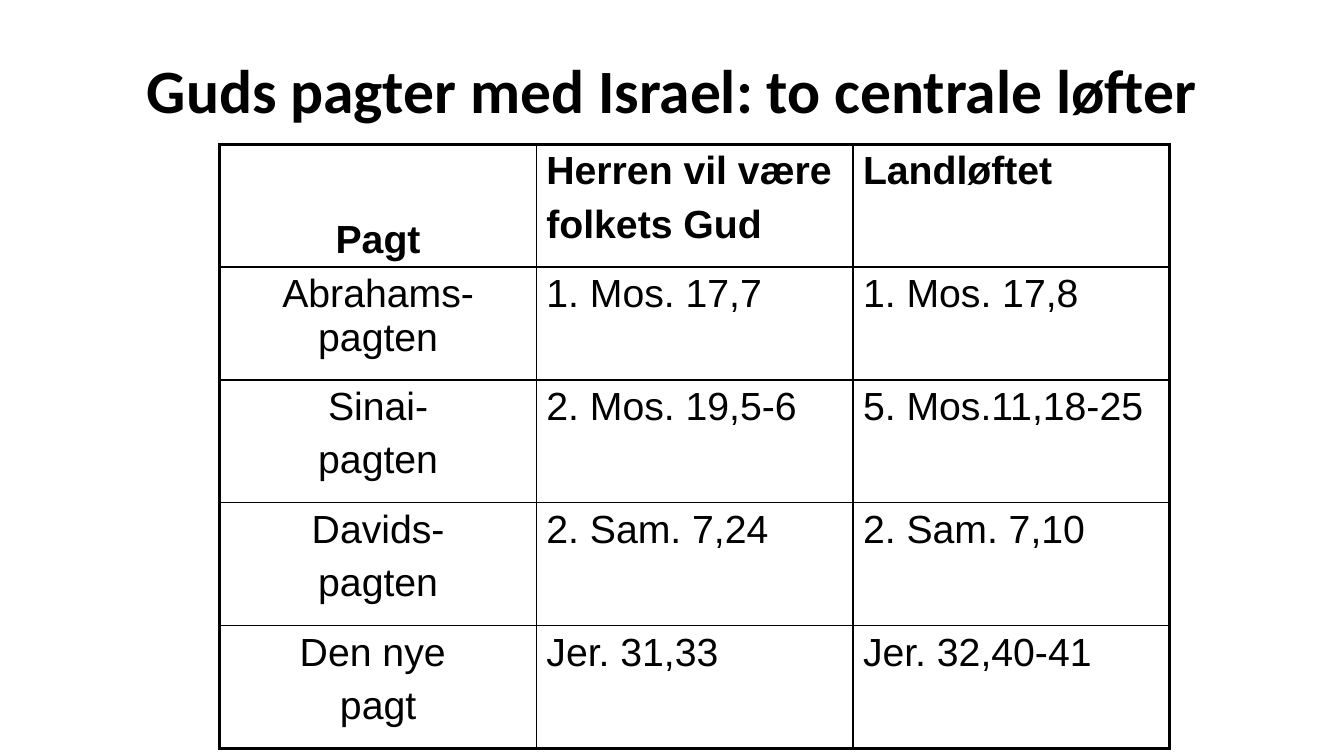
from dataclasses import dataclass

from pptx import Presentation
from pptx import util as u
from pptx.dml.color import RGBColor
from pptx.enum import text
from pptx.oxml import parse_xml
from pptx.oxml.ns import nsdecls

PX = 9144  # EMU per px, 100 px to the inch
COLOURS = {"ink": "000000"}
INK = RGBColor.from_string(COLOURS["ink"])
THIN, THICK = 1, 2.25
COLUMN_WIDTH = 314
ROW_HEIGHT, ABRAHAM_HEIGHT = 122, 112


@dataclass(frozen=True)
class Covenant:
    name: str
    god_promise: str
    land_promise: str
    height: int = ROW_HEIGHT


HEADINGS = Covenant("Pagt", "Herren vil være\nfolkets Gud", "Landløftet")
COVENANTS = [
    Covenant("Abrahams-pagten", "1. Mos. 17,7", "1. Mos. 17,8", ABRAHAM_HEIGHT),
    Covenant("Sinai-\npagten", "2. Mos. 19,5-6", "5. Mos.11,18-25"),
    Covenant("Davids-\npagten", "2. Sam. 7,24", "2. Sam. 7,10"),
    Covenant("Den nye \npagt", "Jer. 31,33", "Jer. 32,40-41"),
]


def px(length: int) -> u.Emu:
    return u.Emu(length * PX)


def add_border(cell, side: str, points: float) -> None:
    """Draw one side (L, R, T or B); call in that order, before the fill."""
    cell._tc.get_or_add_tcPr().append(parse_xml(
        f'<a:ln{side} {nsdecls("a")} w="{u.Pt(points)}"><a:solidFill>'
        f'<a:srgbClr val="{COLOURS["ink"]}"/></a:solidFill></a:ln{side}>'))


def fill_cell(cell, wording: str, bold: bool, centred: bool) -> None:
    cell.text = wording
    for paragraph in cell.text_frame.paragraphs:
        paragraph.alignment = text.PP_ALIGN.CENTER if centred else text.PP_ALIGN.LEFT
        paragraph.space_before = u.Pt(7)
        paragraph.font.name = "Arial"
        paragraph.font.size = u.Pt(28)
        paragraph.font.bold = bold
        paragraph.font.color.rgb = INK


def add_title(slide) -> None:
    title = slide.shapes.title
    title.left, title.top, title.width, title.height = map(px, (67, 30, 1200, 125))
    frame = title.text_frame
    frame.text = "Guds pagter med Israel: to centrale løfter"
    frame.auto_size = text.MSO_AUTO_SIZE.NONE
    frame.vertical_anchor = text.MSO_ANCHOR.MIDDLE
    heading = frame.paragraphs[0]
    heading.alignment = text.PP_ALIGN.CENTER
    heading.line_spacing = 0.9
    heading.font.name = "Calibri"
    heading.font.size = u.Pt(44)
    heading.font.bold = True
    heading.font.color.rgb = INK


def add_covenant_table(slide) -> None:
    entries = [HEADINGS, *COVENANTS]
    height = sum(entry.height for entry in entries)
    table = slide.shapes.add_table(len(entries), 3, px(218), px(143),
                                   px(3 * COLUMN_WIDTH), px(height)).table
    table.first_row = table.horz_banding = False
    for column in table.columns:
        column.width = px(COLUMN_WIDTH)
    last_row, last_column = len(entries) - 1, 2
    for r, entry in enumerate(entries):
        table.rows[r].height = px(entry.height)
        for c, wording in enumerate((entry.name, entry.god_promise, entry.land_promise)):
            cell = table.cell(r, c)
            fill_cell(cell, wording, bold=r == 0, centred=c == 0)
            outer = {"L": c == 0, "R": c == last_column, "T": r == 0, "B": r == last_row}
            for side, is_outer in outer.items():
                add_border(cell, side, THICK if is_outer else THIN)
            cell.fill.background()
    table.cell(0, 0).vertical_anchor = text.MSO_ANCHOR.BOTTOM


def main() -> None:
    deck = Presentation()
    deck.slide_width, deck.slide_height = px(1333), px(750)
    slide = deck.slides.add_slide(deck.slide_layouts[5])
    add_title(slide)
    add_covenant_table(slide)
    deck.save("out.pptx")


if __name__ == "__main__":
    main()
